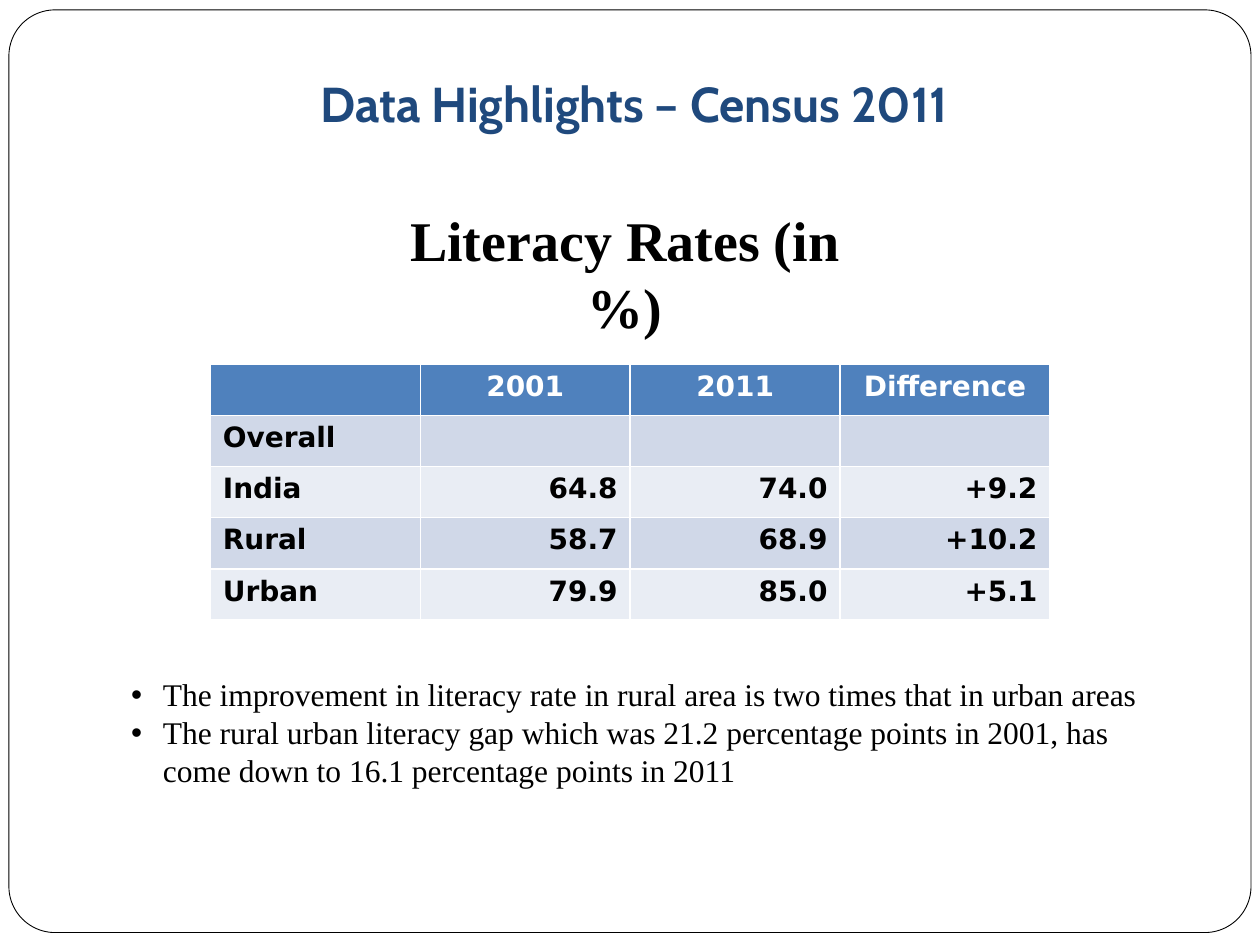
from lxml import etree
from pptx import Presentation
from pptx.dml.color import RGBColor
from pptx.enum import shapes, text
from pptx.oxml import ns
from pptx.util import Cm, Pt

BLACK = RGBColor(0x00, 0x00, 0x00)
WHITE = RGBColor(0xFF, 0xFF, 0xFF)
NAVY = RGBColor(0x1F, 0x49, 0x7D)
BLUE = RGBColor(0x4F, 0x81, 0xBD)
BANDS = [RGBColor(0xD0, 0xD8, 0xE8), RGBColor(0xE9, 0xED, 0xF4)]

SERIF = "Times New Roman"
LEFT, MID, RIGHT = text.PP_ALIGN.LEFT, text.PP_ALIGN.CENTER, text.PP_ALIGN.RIGHT

RATES = [
    ["", "2001", "2011", "Difference"],
    ["Overall", "", "", ""],
    ["India", "64.8", "74.0", "+9.2"],
    ["Rural", "58.7", "68.9", "+10.2"],
    ["Urban", "79.9", "85.0", "+5.1"],
]
POINTS = [
    "The improvement in literacy rate in rural area is two times that in urban areas",
    "The rural urban literacy gap which was 21.2 percentage points in 2001, has "
    "come down to 16.1 percentage points in 2011",
]


def place(shape, box):
    shape.left, shape.top, shape.width, shape.height = map(Cm, box)


def style(para, font, size, color, align, bold=True):
    para.alignment = align
    for run in para.runs:
        run.font.name = font
        run.font.size = Pt(size)
        run.font.bold = bold
        run.font.color.rgb = color


def add_frame(slide, box):
    frame = slide.shapes.add_shape(
        shapes.MSO_SHAPE.ROUNDED_RECTANGLE, *map(Cm, box))
    frame.adjustments[0] = 0.05
    frame.shadow.inherit = False
    frame.fill.solid()
    frame.fill.fore_color.rgb = WHITE
    frame.line.color.rgb = BLACK
    frame.line.width = Pt(0.5)
    # Send behind the placeholders
    slide.shapes._spTree.insert(2, frame._element)


def set_title(slide, box):
    title = slide.shapes.title
    place(title, box)
    body = title.text_frame
    body.text = "Data Highlights – Census 2011"
    body.auto_size = text.MSO_AUTO_SIZE.NONE
    body.vertical_anchor = text.MSO_ANCHOR.BOTTOM
    body.margin_left = body.margin_top = body.margin_bottom = 0
    body.margin_right = Cm(0.05)
    style(body.paragraphs[0], "Cabin", 28, NAVY, MID)


def add_heading(slide, box):
    body = slide.shapes.add_textbox(*map(Cm, box)).text_frame
    body.word_wrap = True
    body.text = "Literacy Rates (in %)"
    style(body.paragraphs[0], SERIF, 32, BLACK, MID)


def add_rates(slide, box):
    # The default table style draws the white grid
    table = slide.shapes.add_table(
        len(RATES), len(RATES[0]), *map(Cm, box)).table
    for r, row in enumerate(RATES):
        for c, value in enumerate(row):
            cell = table.cell(r, c)
            cell.fill.solid()
            cell.fill.fore_color.rgb = BANDS[(r - 1) % 2] if r else BLUE
            cell.text = value
            align = MID if r == 0 else RIGHT if c else LEFT
            style(cell.text_frame.paragraphs[0], "DejaVu Sans", 16,
                  BLACK if r else WHITE, align)


def set_points(slide, box):
    holder = slide.placeholders[1]
    place(holder, box)
    body = holder.text_frame
    body.text = "\n".join(POINTS)
    body.auto_size = text.MSO_AUTO_SIZE.NONE
    for para in body.paragraphs:
        para.space_before = Pt(0)
        style(para, SERIF, 18, BLACK, LEFT, bold=False)
        # Hanging bullet
        props = para._p.get_or_add_pPr()
        props.set("marL", str(Cm(0.64)))
        props.set("indent", str(-Cm(0.64)))
        etree.SubElement(props, ns.qn("a:buChar")).set("char", "•")


def main():
    deck = Presentation()
    deck.slide_width, deck.slide_height = Cm(25.4), Cm(19.05)
    slide = deck.slides.add_slide(deck.slide_layouts[1])
    add_frame(slide, (0.18, 0.2, 25.04, 18.6))
    set_title(slide, (2.39, 1.27, 20.83, 1.4))
    add_heading(slide, (7.14, 4.01, 10.92, 1.63))
    add_rates(slide, (4.24, 7.34, 16.93, 5.16))
    set_points(slide, (2.39, 13.49, 21.23, 3.33))
    deck.save("out.pptx")


if __name__ == "__main__":
    main()
